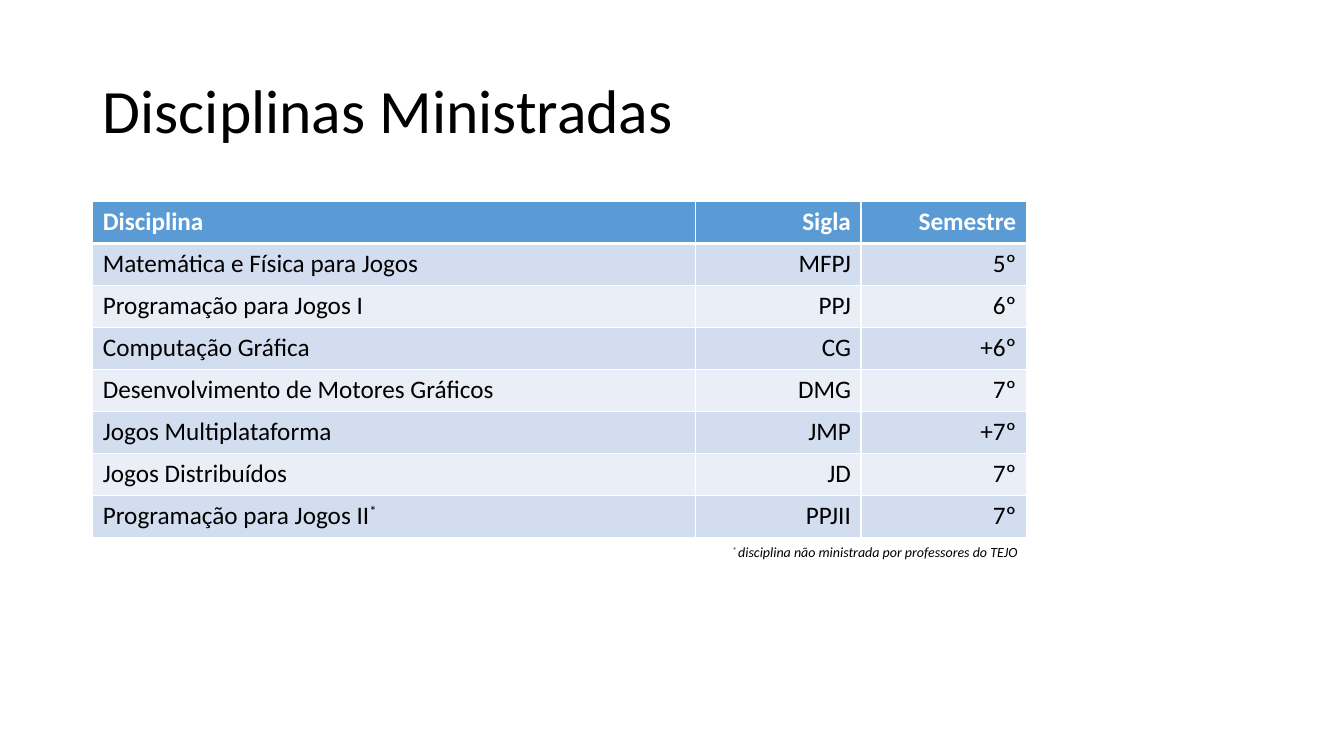
from dataclasses import dataclass

from lxml import etree
from pptx import Presentation
from pptx.dml.color import RGBColor
from pptx.enum.text import MSO_ANCHOR, MSO_AUTO_SIZE, PP_ALIGN
from pptx.oxml.ns import qn
from pptx.util import Inches, Pt

LEFT, RIGHT = PP_ALIGN.LEFT, PP_ALIGN.RIGHT
MIDDLE = MSO_ANCHOR.MIDDLE
GROW = MSO_AUTO_SIZE.SHAPE_TO_FIT_TEXT
FONT = "Calibri"
BLACK, WHITE = "000000", "FFFFFF"
HEADER_FILL = "5B9BD5"
BAND_FILLS = ("EAEFF7", "D2DEEF")
COL_WIDTHS = (5.98, 1.64, 1.64)
TABLE_HEIGHT = 3.33


@dataclass
class Course:
    name: str
    code: str
    semester: str
    mark: str = ""


HEADER = Course("Disciplina", "Sigla", "Semestre")
COURSES = [
    Course("Matemática e Física para Jogos", "MFPJ", "5º"),
    Course("Programação para Jogos I", "PPJ", "6º"),
    Course("Computação Gráfica", "CG", "+6º"),
    Course("Desenvolvimento de Motores Gráficos", "DMG", "7º"),
    Course("Jogos Multiplataforma", "JMP", "+7º"),
    Course("Jogos Distribuídos", "JD", "7º"),
    Course("Programação para Jogos II", "PPJII", "7º", "*"),
]


def rgb(color: str) -> RGBColor:
    return RGBColor.from_string(color)


def format_run(r, size: float, color: str = BLACK, bold: bool = False,
               italic: bool = False) -> None:
    r.font.name = FONT
    r.font.size = Pt(size)
    r.font.color.rgb = rgb(color)
    r.font.bold = bold
    r.font.italic = italic


def superscript(r) -> None:
    r._r.get_or_add_rPr().set("baseline", "30000")


def set_borders(cell, top: float, bottom: float) -> None:
    tcPr = cell._tc.get_or_add_tcPr()
    for tag, width in (("lnL", 1), ("lnR", 1), ("lnT", top), ("lnB", bottom)):
        ln = etree.SubElement(tcPr, qn(f"a:{tag}"), w=str(Pt(width)))
        fill = etree.SubElement(ln, qn("a:solidFill"))
        etree.SubElement(fill, qn("a:srgbClr"), val=WHITE)


def add_title(s, text: str) -> None:
    title = s.shapes.title
    title.left, title.top = Inches(0.92), Inches(0.4)
    title.width, title.height = Inches(11.5), Inches(1.45)
    tf = title.text_frame
    tf.text = text
    tf.vertical_anchor = MIDDLE
    p = tf.paragraphs[0]
    p.alignment = LEFT
    p.line_spacing = 0.9
    format_run(p.runs[0], 44)


def fill_row(table, i: int, course: Course) -> None:
    is_header = i == 0
    for j, text in enumerate((course.name, course.code, course.semester)):
        cell = table.cell(i, j)
        set_borders(cell, 3 if i == 1 else 1, 3 if is_header else 1)
        cell.fill.solid()
        cell.fill.fore_color.rgb = rgb(HEADER_FILL if is_header else BAND_FILLS[i % 2])
        p = cell.text_frame.paragraphs[0]
        p.text = text
        p.alignment = RIGHT if j else LEFT
        if course.mark and j == 0:
            r = p.add_run()
            r.text = course.mark
            superscript(r)
        for r in p.runs:
            format_run(r, 18, WHITE if is_header else BLACK, bold=is_header)


def add_course_table(s) -> None:
    rows = [HEADER, *COURSES]
    table = s.shapes.add_table(len(rows), len(COL_WIDTHS), Inches(0.92), Inches(2),
                               Inches(sum(COL_WIDTHS)), Inches(TABLE_HEIGHT)).table
    for column, width in zip(table.columns, COL_WIDTHS):
        column.width = Inches(width)
    for i, course in enumerate(rows):
        table.rows[i].height = Inches(TABLE_HEIGHT / len(rows))
        fill_row(table, i, course)


def add_footnote(s, mark: str, text: str) -> None:
    tf = s.shapes.add_textbox(Inches(1.33), Inches(5.34),
                              Inches(8.86), Inches(0.28)).text_frame
    tf.word_wrap = True
    tf.auto_size = GROW
    p = tf.paragraphs[0]
    p.text = mark
    p.alignment = RIGHT
    superscript(p.runs[0])
    p.add_run().text = text
    for r in p.runs:
        format_run(r, 10, italic=True)


def main() -> None:
    prs = Presentation()
    prs.slide_width, prs.slide_height = Inches(13.33), Inches(7.5)
    s = prs.slides.add_slide(prs.slide_layouts[5])
    add_title(s, "Disciplinas Ministradas")
    add_course_table(s)
    add_footnote(s, "* ", "disciplina não ministrada por professores do TEJO")
    prs.save("out.pptx")


if __name__ == "__main__":
    main()
